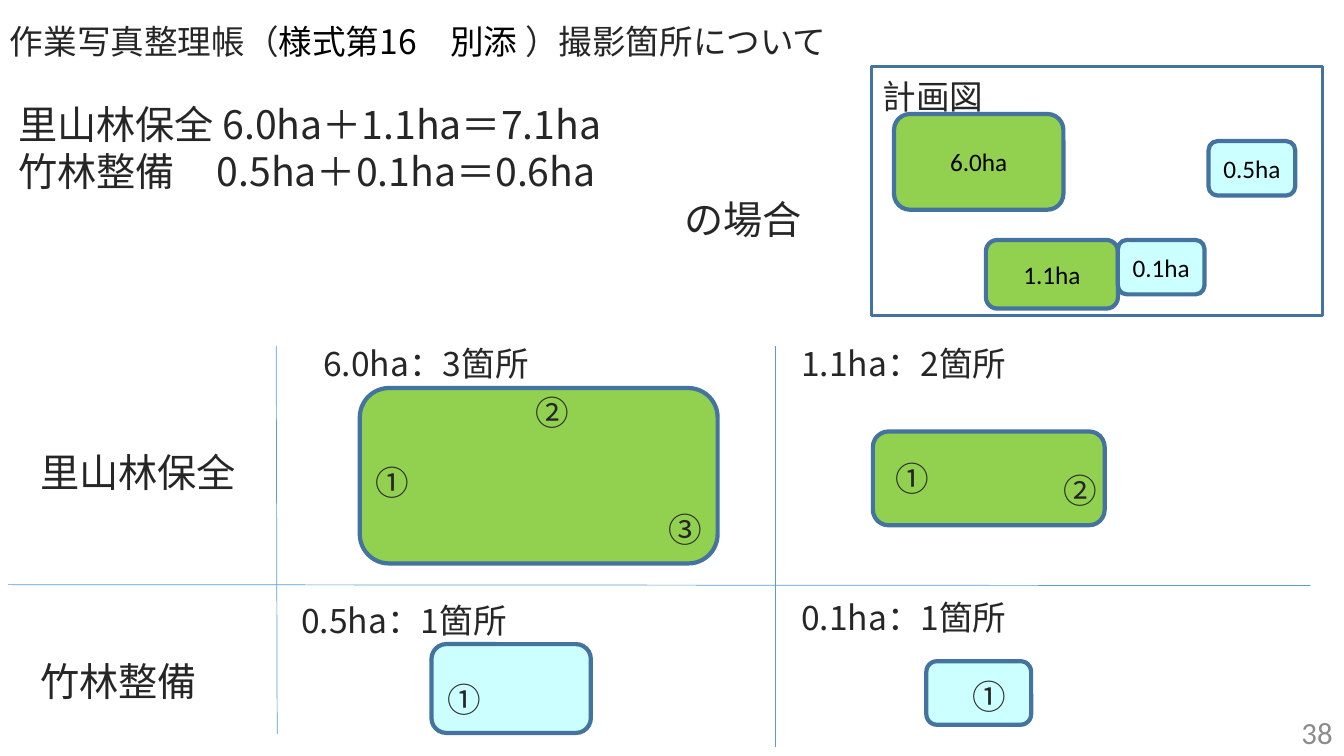
"""Build the slide that explains where work photographs are taken."""
from dataclasses import dataclass

from lxml.etree import SubElement
from pptx import Presentation
from pptx.dml.color import RGBColor
from pptx.enum.shapes import MSO_CONNECTOR as CONN, MSO_SHAPE as SHAPE
from pptx.enum.text import MSO_ANCHOR as ANCHOR, MSO_AUTO_SIZE as FIT, PP_ALIGN as ALIGN
from pptx.oxml.ns import qn
from pptx.util import Pt


@dataclass(frozen=True)
class Theme:
    """Colours, fonts and type sizes of the slide."""
    ink: str = "262626"
    black: str = "000000"
    grey: str = "8C8C8C"
    forest: str = "92D050"
    bamboo: str = "CCFFFF"
    outline: str = "43739E"
    rule: str = "5B9BD5"
    cjk: str = "Noto Sans CJK JP"
    latin: str = "Calibri"
    large: int = 28
    body: int = 24
    number: int = 22
    small: int = 18


T = Theme()

PLAN = [
    ("6.0ha", T.forest, (638.6, 81.4, 121, 68.4)),
    ("1.1ha", T.forest, (704.2, 171.4, 94.3, 49)),
    ("0.5ha", T.bamboo, (863.3, 100.8, 61.9, 38.9)),
    ("0.1ha", T.bamboo, (798.5, 171.4, 61.9, 38.9)),
]

PLOTS = [
    ("6.0ha：3箇所", (223.9, 241.2), T.forest, (257, 277.2, 255.6, 125.3),
     [("①", 261.4, 326.2), ("②", 375.8, 276.5), ("③", 470.2, 360)]),
    ("1.1ha：2箇所", (565.2, 241.2), T.forest, (623.5, 308.2, 165.6, 67),
     [("①", 632.9, 323.3), ("②", 752.4, 331.9)]),
    ("0.5ha：1箇所", (208.1, 424.8), T.bamboo, (308.2, 460.1, 113.8, 63.4),
     [("①", 312.5, 481.7)]),
    ("0.1ha：1箇所", (565.2, 422.6), T.bamboo, (661.7, 472.3, 74.9, 45.4),
     [("①", 687.6, 479.5)]),
]

ROWS = [("里山林保全", 316.8), ("竹林整備", 465.8)]

RULES = [
    (5.8, 417.6, 936, 418.3),
    (553.7, 247, 553.7, 533.5),
    (197.3, 247, 198, 524.2),
]


def rgb(code):
    """Return the colour for a hex code."""
    return RGBColor.from_string(code)


def add_run(p, text, size, color=T.ink, font=T.cjk):
    """Add one formatted run to a paragraph."""
    r = p.add_run()
    r.text = text
    r.font.size = Pt(size)
    r.font.name = font
    r.font.color.rgb = rgb(color)
    SubElement(r._r.get_or_add_rPr(), qn("a:ea")).set("typeface", font)


def add_box(s, box):
    """Add an empty wrapping text box and return its text frame."""
    tf = s.shapes.add_textbox(*map(Pt, box)).text_frame
    tf.word_wrap = True
    tf.auto_size = FIT.SHAPE_TO_FIT_TEXT
    return tf


def add_label(s, text, box, size=T.body):
    """Add a text box with a single run."""
    add_run(add_box(s, box).paragraphs[0], text, size)


def add_area(s, kind, box, fill=None, width=3, text=None):
    """Add an outlined area, filled and captioned on request."""
    sp = s.shapes.add_shape(kind, *map(Pt, box))
    sp.shadow.inherit = False
    if fill:
        sp.fill.solid()
        sp.fill.fore_color.rgb = rgb(fill)
    else:
        sp.fill.background()
    sp.line.color.rgb = rgb(T.outline)
    sp.line.width = Pt(width)
    if text:
        tf = sp.text_frame
        tf.vertical_anchor = ANCHOR.MIDDLE
        p = tf.paragraphs[0]
        p.alignment = ALIGN.CENTER
        add_run(p, text, T.small, T.black, T.latin)


def add_rule(s, ends):
    """Add a thin dividing line."""
    line = s.shapes.add_connector(CONN.STRAIGHT, *map(Pt, ends))
    line.line.color.rgb = rgb(T.rule)
    line.line.width = Pt(0.5)
    SubElement(line._element.spPr, qn("a:effectLst"))


def add_title(s):
    """Add the heading with its darker form name."""
    p = add_box(s, (0, 11.5, 960, 36)).paragraphs[0]
    add_run(p, "作業写真整理帳（", T.body)
    add_run(p, "様式第16　別添 ", T.body, T.black)
    add_run(p, "）撮影箇所について", T.body)


def add_sums(s):
    """Add the area sums, aligned with a tab stop and an indent."""
    tf = add_box(s, (5.8, 68.4, 594.7, 108.7))
    forest, bamboo, case = tf.paragraphs[0], tf.add_paragraph(), tf.add_paragraph()
    tabs = SubElement(bamboo._p.get_or_add_pPr(), qn("a:tabLst"))
    tab = SubElement(tabs, qn("a:tab"))
    tab.set("pos", str(Pt(142)))
    tab.set("algn", "l")
    case._p.get_or_add_pPr().set("marL", str(Pt(476)))
    add_run(forest, "里山林保全 6.0ha＋1.1ha＝7.1ha", T.large)
    add_run(bamboo, "竹林整備\t0.5ha＋0.1ha＝0.6ha", T.large)
    add_run(case, "の場合", T.large)


def add_plan(s):
    """Add the framed plan with its four areas."""
    add_area(s, SHAPE.RECTANGLE, (622.8, 47.5, 321.8, 177.8), width=2.25)
    add_label(s, "計画図", (623.5, 50.4, 100.8, 36))
    for name, fill, box in PLAN:
        add_area(s, SHAPE.ROUNDED_RECTANGLE, box, fill, text=name)


def add_plot(s, title, corner, fill, box, marks):
    """Add one enlarged area with its title and numbered photo spots."""
    add_area(s, SHAPE.ROUNDED_RECTANGLE, box, fill)
    add_label(s, title, (*corner, 233.3, 36))
    for mark, x, y in marks:
        add_label(s, mark, (x, y, 46 if mark == "①" else 39, 36))


def add_number(s):
    """Add the slide number."""
    tf = add_box(s, (743, 508.3, 216, 28.8))
    tf.auto_size = FIT.NONE
    tf.vertical_anchor = ANCHOR.MIDDLE
    p = tf.paragraphs[0]
    p.alignment = ALIGN.RIGHT
    add_run(p, "38", T.number, T.grey, T.latin)


def main():
    """Build and save the slide."""
    prs = Presentation()
    prs.slide_width, prs.slide_height = Pt(960), Pt(540)
    s = prs.slides.add_slide(prs.slide_layouts[6])
    add_number(s)
    add_title(s)
    add_sums(s)
    for ends in RULES:
        add_rule(s, ends)
    for name, top in ROWS:
        add_label(s, name, (21.6, top, 176.4, 41), T.large)
    for plot in PLOTS:
        add_plot(s, *plot)
    add_plan(s)
    prs.save("out.pptx")


if __name__ == "__main__":
    main()
